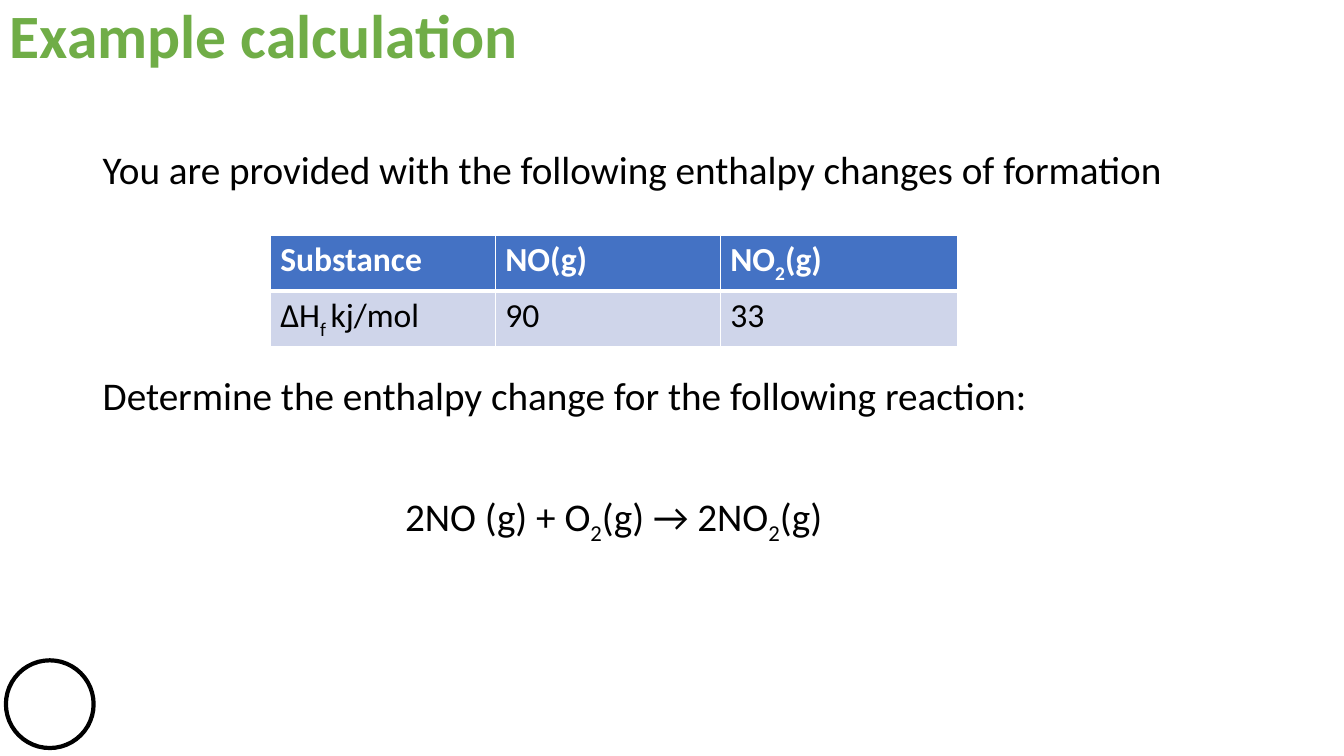
from dataclasses import dataclass
from typing import Any

from lxml.etree import SubElement
from pptx import Presentation
from pptx.dml.color import RGBColor
from pptx.enum.shapes import MSO_SHAPE
from pptx.enum.text import MSO_ANCHOR
from pptx.oxml.ns import qn
from pptx.util import Cm, Pt


@dataclass(frozen=True)
class Theme:
    font: str = "Calibri"
    title_size: int = 44
    body_size: int = 28
    table_size: int = 24
    green: str = "70AD47"
    blue: str = "4472C4"
    pale_blue: str = "CFD5EA"
    black: str = "000000"
    white: str = "FFFFFF"


@dataclass(frozen=True)
class Run:
    text: str
    subscript: bool = False


@dataclass(frozen=True)
class Line:
    runs: tuple[Run, ...]
    space_before: float = 0
    indent: float = 0


@dataclass(frozen=True)
class TextBlock:
    left: float
    top: float
    width: float
    height: float
    size: int
    color: str
    bold: bool
    lines: tuple[Line, ...]


@dataclass(frozen=True)
class RowStyle:
    fill: str
    color: str
    bold: bool
    borders: dict[str, int]


THEME = Theme()

TITLE = TextBlock(0, 0, 31.55, 3.68, THEME.title_size, THEME.green, True,
                  (Line((Run("Example calculation"),)),))
EXERCISE = TextBlock(
    2.34, 3.68, 29.21, 12.09, THEME.body_size, THEME.black, False,
    (
        Line((Run("You are provided with the following enthalpy changes of formation"),)),
        Line((Run("Determine the enthalpy change for the following reaction:"),), 131),
        Line((Run("2NO (g) + O"), Run("2", True), Run("(g) → 2NO"),
              Run("2", True), Run("(g)")), 53, 7.62),
    ),
)

HEADER_STYLE = RowStyle(THEME.blue, THEME.white, True,
                        {"lnL": 1, "lnR": 1, "lnT": 1, "lnB": 3})
VALUE_STYLE = RowStyle(THEME.pale_blue, THEME.black, False,
                       {"lnL": 1, "lnR": 1, "lnT": 3, "lnB": 1})
ENTHALPIES = (
    (HEADER_STYLE, ((Run("Substance"),), (Run("NO(g)"),),
                    (Run("NO"), Run("2", True), Run("(g)")))),
    (VALUE_STYLE, ((Run("ΔH"), Run("f ", True), Run("kj/mol")),
                   (Run("90"),), (Run("33"),))),
)
COLUMN_WIDTHS = (5.67, 5.67, 5.98)
ROW_HEIGHT = 1.27


def apply_format(target: Any, values: dict[str, Any]) -> None:
    for name, value in values.items():
        setattr(target, name, value)


def write_runs(paragraph: Any, runs: tuple[Run, ...], size: int, color: str, bold: bool) -> None:
    for part in runs:
        run = paragraph.add_run()
        run.text = part.text
        apply_format(run.font, {"name": THEME.font, "size": Pt(size), "bold": bold})
        run.font.color.rgb = RGBColor.from_string(color)
        if part.subscript:
            run.font._element.set("baseline", "-25000")


def draw_text(slide: Any, block: TextBlock) -> None:
    frame = slide.shapes.add_textbox(
        Cm(block.left), Cm(block.top), Cm(block.width), Cm(block.height)).text_frame
    apply_format(frame, {"word_wrap": True, "vertical_anchor": MSO_ANCHOR.TOP})
    for index, line in enumerate(block.lines):
        paragraph = frame.add_paragraph() if index else frame.paragraphs[0]
        apply_format(paragraph, {"line_spacing": 0.9, "space_before": Pt(line.space_before)})
        if line.indent:
            paragraph._p.get_or_add_pPr().set("marL", str(Cm(line.indent)))
        write_runs(paragraph, line.runs, block.size, block.color, block.bold)


def draw_borders(cell: Any, borders: dict[str, int]) -> None:
    properties = cell._tc.get_or_add_tcPr()
    for index, (side, width) in enumerate(borders.items()):
        edge = SubElement(properties, qn(f"a:{side}"), w=str(Pt(width)))
        fill = SubElement(edge, qn("a:solidFill"))
        SubElement(fill, qn("a:srgbClr"), val=THEME.white)
        properties.insert(index, edge)


def draw_enthalpies(slide: Any) -> None:
    table = slide.shapes.add_table(
        len(ENTHALPIES), len(COLUMN_WIDTHS), Cm(6.81), Cm(5.92),
        Cm(sum(COLUMN_WIDTHS)), Cm(ROW_HEIGHT * len(ENTHALPIES))).table
    for column, width in zip(table.columns, COLUMN_WIDTHS):
        column.width = Cm(width)
    for row, (style, entries) in zip(table.rows, ENTHALPIES):
        row.height = Cm(ROW_HEIGHT)
        for cell, runs in zip(row.cells, entries):
            cell.fill.solid()
            cell.fill.fore_color.rgb = RGBColor.from_string(style.fill)
            draw_borders(cell, style.borders)
            write_runs(cell.text_frame.paragraphs[0], runs,
                       THEME.table_size, style.color, style.bold)


def draw_corner_circle(slide: Any) -> None:
    circle = slide.shapes.add_shape(
        MSO_SHAPE.OVAL, Cm(0.15), Cm(16.64), Cm(2.21), Cm(2.21))
    circle.shadow.inherit = False
    circle.fill.solid()
    circle.fill.fore_color.rgb = RGBColor.from_string(THEME.white)
    circle.line.color.rgb = RGBColor.from_string(THEME.black)
    circle.line.width = Pt(3)


def main() -> None:
    presentation = Presentation()
    apply_format(presentation, {"slide_width": Cm(33.87), "slide_height": Cm(19.05)})
    slide = presentation.slides.add_slide(presentation.slide_layouts[6])
    draw_corner_circle(slide)
    for block in (EXERCISE, TITLE):
        draw_text(slide, block)
    draw_enthalpies(slide)
    presentation.save("out.pptx")


if __name__ == "__main__":
    main()
